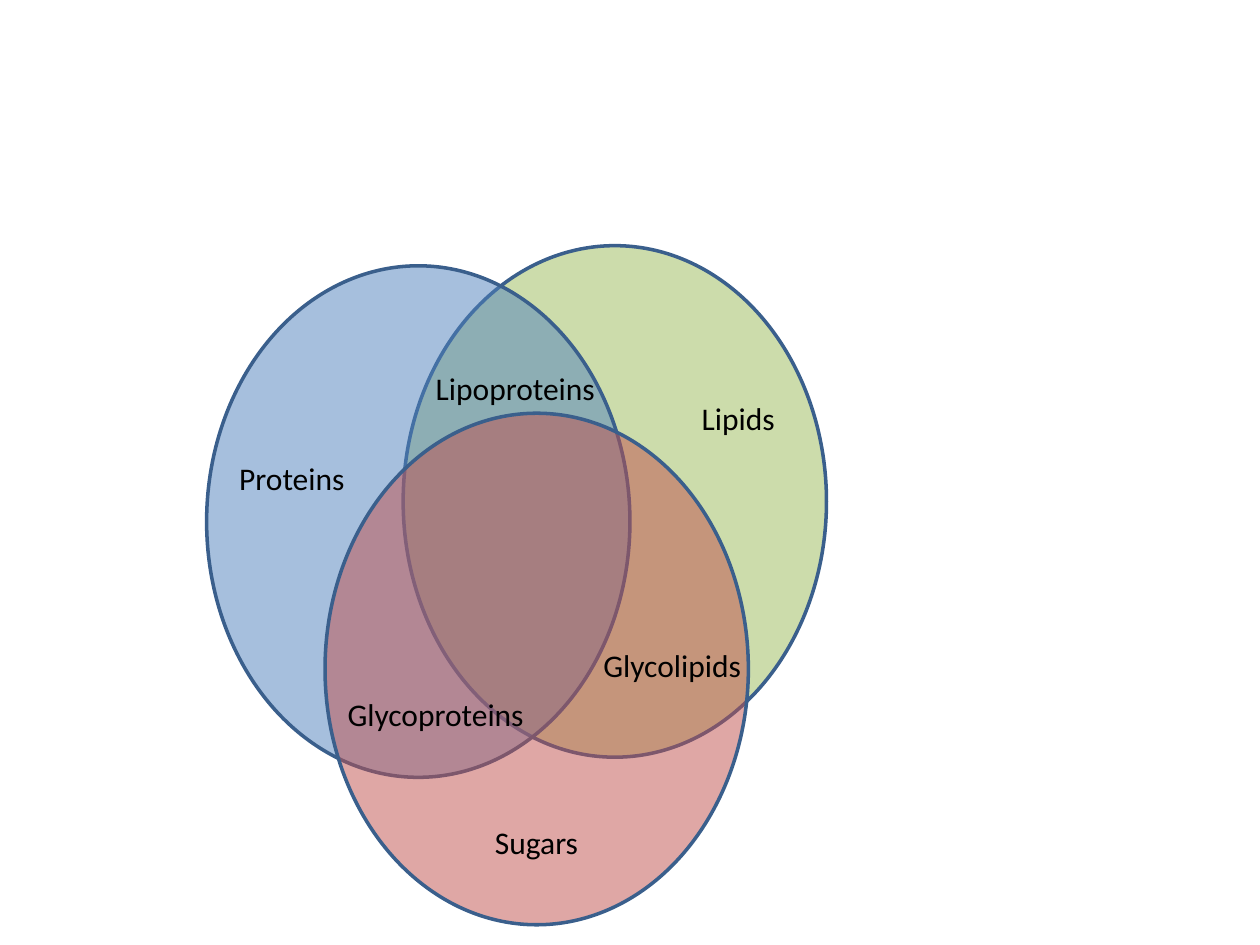
from lxml import etree
from pptx import Presentation
from pptx.dml.color import RGBColor
from pptx.enum.shapes import MSO_SHAPE
from pptx.enum.text import MSO_AUTO_SIZE
from pptx.oxml.ns import qn
from pptx.util import Pt

ELLIPSE = MSO_SHAPE.OVAL
FIT_SHAPE = MSO_AUTO_SIZE.SHAPE_TO_FIT_TEXT
BLANK_LAYOUT = 6

ELLIPSE_WIDTH, ELLIPSE_HEIGHT = 241.92, 292.32
LABEL_HEIGHT = 28.8
GROUP_WIDTH, OVERLAP_WIDTH = 106.56, 123.84

# left, top, fill, from back to front
ELLIPSES = [
    (230.4, 140.4, "9BBB59"),
    (118.08, 151.92, "4F81BD"),
    (185.76, 236.16, "C0504D"),
]

# text, left, top, width
LABELS = [
    ("Lipids", 393.84, 224.64, GROUP_WIDTH),
    ("Proteins", 129.6, 258.48, GROUP_WIDTH),
    ("Sugars", 275.76, 466.56, GROUP_WIDTH),
    ("Glycoproteins", 191.52, 393.84, OVERLAP_WIDTH),
    ("Glycolipids", 337.68, 365.76, OVERLAP_WIDTH),
    ("Lipoproteins", 241.92, 207.36, OVERLAP_WIDTH),
]


def color(hex_string):
    return RGBColor.from_string(hex_string)


def set_opacity(shape, percent):
    fill_color = shape.fill._xPr.find(qn("a:solidFill"))[0]
    etree.SubElement(fill_color, qn("a:alpha"), val=str(percent * 1000))


def add_ellipse(slide, left, top, fill):
    shape = slide.shapes.add_shape(
        ELLIPSE, Pt(left), Pt(top), Pt(ELLIPSE_WIDTH), Pt(ELLIPSE_HEIGHT))
    shape.shadow.inherit = False
    shape.fill.solid()
    shape.fill.fore_color.rgb = color(fill)
    set_opacity(shape, 50)
    shape.line.color.rgb = color("3A5F8C")
    shape.line.width = Pt(2)


def add_label(slide, text, left, top, width):
    box = slide.shapes.add_textbox(Pt(left), Pt(top), Pt(width), Pt(LABEL_HEIGHT))
    frame = box.text_frame
    frame.word_wrap = True
    frame.auto_size = FIT_SHAPE
    run = frame.paragraphs[0].add_run()
    run.text = text
    run.font.name = "Calibri"
    run.font.size = Pt(18)
    run.font.color.rgb = color("000000")


def main():
    presentation = Presentation()
    presentation.slide_width = Pt(720)
    presentation.slide_height = Pt(540)
    slide = presentation.slides.add_slide(presentation.slide_layouts[BLANK_LAYOUT])
    for ellipse in ELLIPSES:
        add_ellipse(slide, *ellipse)
    for label in LABELS:
        add_label(slide, *label)
    presentation.save("out.pptx")


if __name__ == "__main__":
    main()
